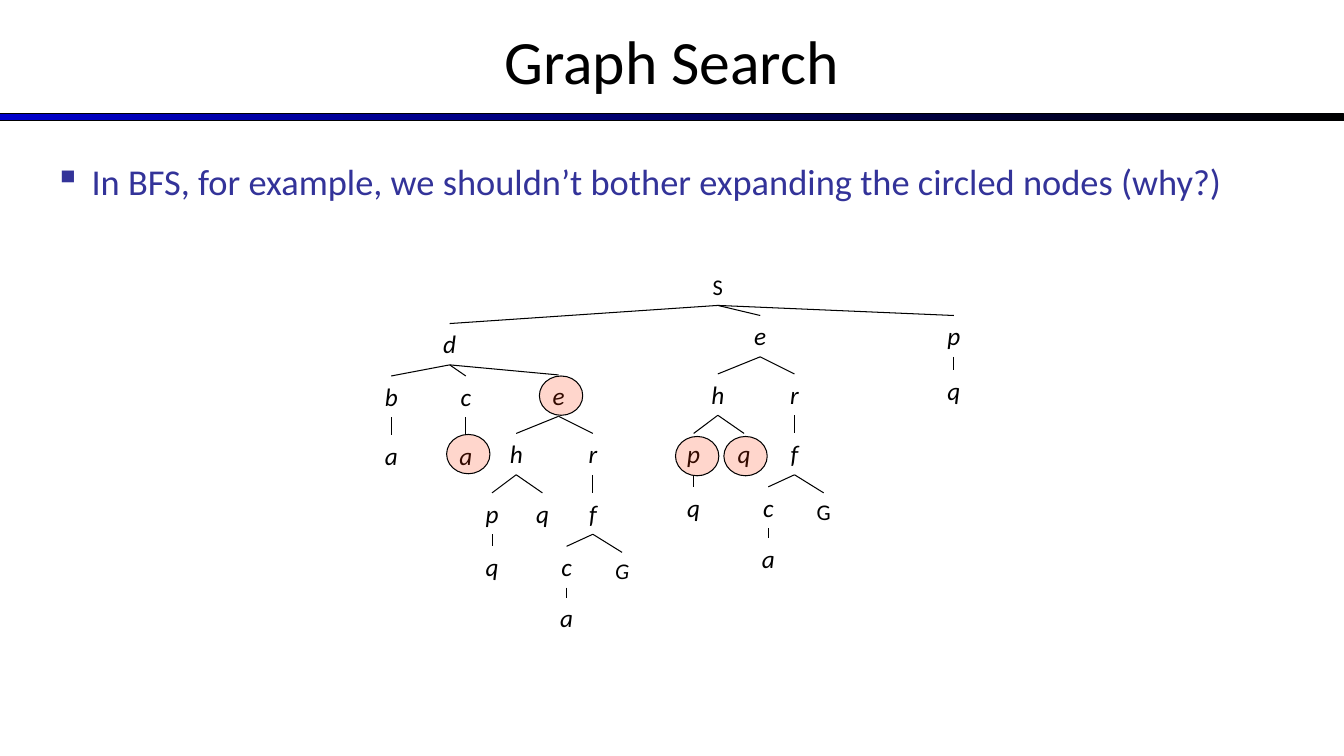
import dataclasses

import pptx
import pptx.dml.color
import pptx.enum.shapes
import pptx.enum.text
import pptx.oxml.ns
import pptx.util
from lxml import etree

PX = 9144  # EMU per px, 100 px to the inch
ALIGN = pptx.enum.text.PP_ALIGN
ANCHOR = pptx.enum.text.MSO_ANCHOR


@dataclasses.dataclass(frozen=True)
class Theme:
    font: str = "Calibri"
    ink: str = "000000"
    body: str = "333399"
    bar: str = "0000CC"
    circle: str = "FF3300"
    circle_alpha: int = 20
    title_size: int = 44
    body_size: int = 26
    node_size: int = 18
    end_size: int = 16
    line: float = 0.75


@dataclasses.dataclass
class Node:
    label: str
    cx: int
    top: int
    kids: tuple = ()
    italic: bool = True


THEME = Theme()
END_WIDTHS = {"S": 108, "G": 84}  # start and goal have wider, lower boxes


def px(*lengths):
    return [pptx.util.Emu(n * PX) for n in lengths]


def rgb(value):
    return pptx.dml.color.RGBColor.from_string(value)


def sub(parent, tag, **attrs):
    return etree.SubElement(parent, pptx.oxml.ns.qn(tag), attrs)


def set_line(line):
    line.color.rgb = rgb(THEME.ink)
    line.width = pptx.util.Pt(THEME.line)


def add_text(s, box, text, size, color=THEME.ink, italic=False,
             align=ALIGN.CENTER, anchor=ANCHOR.TOP):
    sp = s.shapes.add_textbox(*px(*box))
    tf = sp.text_frame
    tf.word_wrap = True
    tf.vertical_anchor = anchor
    p = tf.paragraphs[0]
    p.alignment = align
    r = p.add_run()
    r.text = text
    r.font.name = THEME.font
    r.font.size = pptx.util.Pt(size)
    r.font.italic = italic
    r.font.color.rgb = rgb(color)
    return sp


def add_bullet(sp, char, indent):
    pPr = sp.text_frame.paragraphs[0]._p.get_or_add_pPr()
    pPr.set("marL", str(indent * PX))
    pPr.set("indent", str(-indent * PX))
    sub(sub(pPr, "a:buClr"), "a:srgbClr", val=THEME.body)
    sub(pPr, "a:buChar", char=char)


def add_bar(s, box):
    sp = s.shapes.add_shape(pptx.enum.shapes.MSO_SHAPE.RECTANGLE, *px(*box))
    sp.shadow.inherit = False
    sp.fill.gradient()
    sp.fill.gradient_angle = 0
    for stop, position, color in zip(sp.fill.gradient_stops, (0, 1),
                                     (THEME.bar, THEME.ink)):
        stop.position = position
        stop.color.rgb = rgb(color)
    set_line(sp.line)


def add_circle(s, left, top):
    sp = s.shapes.add_shape(pptx.enum.shapes.MSO_SHAPE.OVAL,
                            *px(left, top, 43, 39))
    sp.shadow.inherit = False
    sp.fill.solid()
    sp.fill.fore_color.rgb = rgb(THEME.circle)
    color = sp.fill._xPr.find(".//" + pptx.oxml.ns.qn("a:srgbClr"))
    sub(color, "a:alpha", val=str(THEME.circle_alpha * 1000))
    set_line(sp.line)


def add_edge(s, parent, child):
    line = s.shapes.add_connector(
        pptx.enum.shapes.MSO_CONNECTOR.STRAIGHT, 0, 0, 0, 0)
    line.begin_connect(parent, 2)
    line.end_connect(child, 0)
    set_line(line.line)
    sub(line._element.spPr, "a:effectLst")


def add_tree(s, node):
    """Draw a node, its subtrees and the edges to them."""
    is_end = node.label in END_WIDTHS
    w, h = END_WIDTHS.get(node.label, 42), 37 if is_end else 41
    size = THEME.end_size if is_end else THEME.node_size
    sp = add_text(s, (node.cx - w // 2, node.top, w, h), node.label, size,
                  italic=node.italic)
    for kid in node.kids:
        add_edge(s, sp, add_tree(s, kid))
    return sp


def e_subtree(cx, top, goal_italic):
    """The expansion of e, which occurs twice in the search tree."""
    def at(label, dx, dy, *kids, italic=True):
        return Node(label, cx + dx, top + dy, kids, italic)

    return at("e", 0, 0,
              at("h", -42, 58,
                 at("p", -66, 117, at("q", -66, 170)),
                 at("q", -16, 117)),
              at("r", 34, 58,
                 at("f", 34, 117,
                    at("c", 8, 170, at("a", 8, 221)),
                    at("G", 63, 176, italic=goal_italic))))


def search_tree():
    d = Node("d", 446, 321, (
        Node("b", 388, 373, (Node("a", 388, 432),)),
        Node("c", 462, 373, (Node("a", 462, 432),)),
        e_subtree(554, 372, True)))
    p = Node("p", 946, 313, (Node("q", 946, 367),))
    return Node("S", 712, 266, (d, e_subtree(754, 313, False), p), False)


def main():
    prs = pptx.Presentation()
    prs.slide_width, prs.slide_height = px(1333, 750)
    s = prs.slides.add_slide(prs.slide_layouts[6])

    # Heading
    add_bar(s, (0, 113, 1333, 7))
    add_text(s, (0, -3, 1333, 125), "Graph Search", THEME.title_size,
             anchor=ANCHOR.MIDDLE)

    # Question
    sp = add_text(s, (44, 153, 1244, 517),
                  "In BFS, for example, we shouldn’t bother expanding "
                  "the circled nodes (why?)",
                  THEME.body_size, THEME.body, align=ALIGN.LEFT)
    add_bullet(sp, "▪", 37)

    # Search tree, then the circled nodes: e, p, a, q
    add_tree(s, search_tree())
    for left, top in ((535, 373), (670, 433), (443, 431), (718, 433)):
        add_circle(s, left, top)

    prs.save("out.pptx")


if __name__ == "__main__":
    main()
